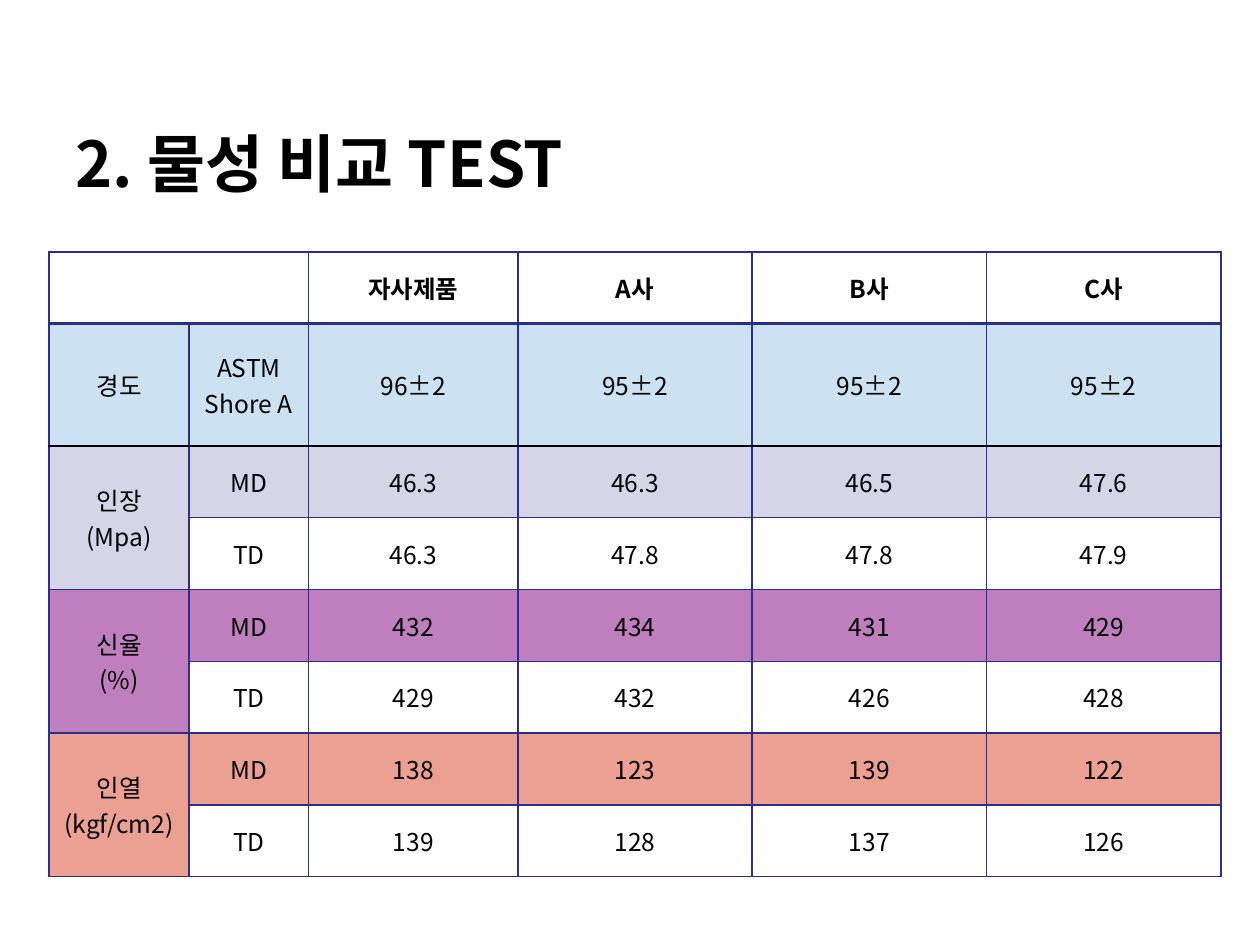
from lxml.etree import SubElement
from pptx import Presentation
from pptx.dml.color import RGBColor
from pptx.enum.text import MSO_ANCHOR, PP_ALIGN
from pptx.oxml import parse_xml
from pptx.oxml.ns import nsdecls, qn
from pptx.util import Inches, Pt

FONT = "Noto Sans CJK KR"
COLORS = {
    "text": "000000",
    "border": "2D2D8A",
    "hardness": "0070C0",
    "tensile": "2D2D8A",
    "elongation": "800080",
    "tear": "DB4325",
}
OPACITY = {"hardness": 20, "tensile": 20, "elongation": 50, "tear": 50}
COLUMN_WIDTHS = [1.11, 0.95, 1.66, 1.86, 1.86, 1.86]
ROW_HEIGHTS = [0.57, 0.97] + [0.57] * 6
ROWS = [
    ["", "", "자사제품", "A사", "B사", "C사"],
    ["경도", "ASTM\nShore A", "96±2", "95±2", "95±2", "95±2"],
    ["인장\n(Mpa)", "MD", "46.3", "46.3", "46.5", "47.6"],
    ["", "TD", "46.3", "47.8", "47.8", "47.9"],
    ["신율\n(%)", "MD", "432", "434", "431", "429"],
    ["", "TD", "429", "432", "426", "428"],
    ["인열\n(kgf/cm2)", "MD", "138", "123", "139", "122"],
    ["", "TD", "139", "128", "137", "126"],
]
ROW_FILLS = {1: "hardness", 2: "tensile", 4: "elongation", 6: "tear"}
MERGES = [((0, 0), (0, 1))] + [((row, 0), (row + 1, 0)) for row in (2, 4, 6)]


def style_text(frame, size, bold, alignment):
    for para in frame.paragraphs:
        para.alignment = alignment
        font = para.font
        font.size = Pt(size)
        font.bold = bold
        font.color.rgb = RGBColor.from_string(COLORS["text"])
        font.name = FONT
        properties = para._p.pPr.find(qn("a:defRPr"))
        SubElement(properties, qn("a:ea")).set("typeface", FONT)


def add_title(slide, text):
    title = slide.shapes.title
    title.left, title.top = Inches(0.5), Inches(0.39)
    title.width, title.height = Inches(9), Inches(1.25)
    frame = title.text_frame
    frame.text = text
    frame.word_wrap = True
    frame.vertical_anchor = MSO_ANCHOR.BOTTOM
    style_text(frame, 36, True, PP_ALIGN.LEFT)


def fill_cell(cell, name):
    if name is None:
        cell.fill.background()
        return
    cell.fill.solid()
    cell.fill.fore_color.rgb = RGBColor.from_string(COLORS[name])
    color = cell._tc.tcPr.find(".//" + qn("a:srgbClr"))
    SubElement(color, qn("a:alpha")).set("val", str(OPACITY[name] * 1000))


def border_cell(cell, row):
    header = ("border", 2)
    divider = ("text", 1)
    plain = ("border", 1)
    top = {1: header, 2: divider}.get(row, plain)
    bottom = {0: header, 1: divider}.get(row, plain)
    sides = [("lnL", plain), ("lnR", plain), ("lnT", top), ("lnB", bottom)]
    for position, (side, (color, width)) in enumerate(sides):
        line = parse_xml(
            f'<a:{side} {nsdecls("a")} w="{Pt(width)}"><a:solidFill>'
            f'<a:srgbClr val="{COLORS[color]}"/></a:solidFill></a:{side}>'
        )
        cell._tc.get_or_add_tcPr().insert(position, line)


def add_comparison_table(slide):
    frame = slide.shapes.add_table(
        len(ROWS), len(COLUMN_WIDTHS), Inches(0.39), Inches(2),
        Inches(sum(COLUMN_WIDTHS)), Inches(sum(ROW_HEIGHTS)),
    )
    table = frame.table
    table.first_row = False
    table.horz_banding = False
    for column, width in zip(table.columns, COLUMN_WIDTHS):
        column.width = Inches(width)
    for row, height in zip(table.rows, ROW_HEIGHTS):
        row.height = Inches(height)
    for start, end in MERGES:
        table.cell(*start).merge(table.cell(*end))
    for row, texts in enumerate(ROWS):
        for column, text in enumerate(texts):
            cell = table.cell(row, column)
            fill_row = row - 1 if cell.is_spanned and row else row
            cell.text = text
            cell.vertical_anchor = MSO_ANCHOR.MIDDLE
            style_text(cell.text_frame, 14, row == 0, PP_ALIGN.CENTER)
            fill_cell(cell, ROW_FILLS.get(fill_row))
            border_cell(cell, row)


def main():
    deck = Presentation()
    deck.slide_width, deck.slide_height = Inches(10), Inches(7.5)
    slide = deck.slides.add_slide(deck.slide_layouts[5])
    add_title(slide, "2. 물성 비교 TEST")
    add_comparison_table(slide)
    deck.save("out.pptx")


if __name__ == "__main__":
    main()
